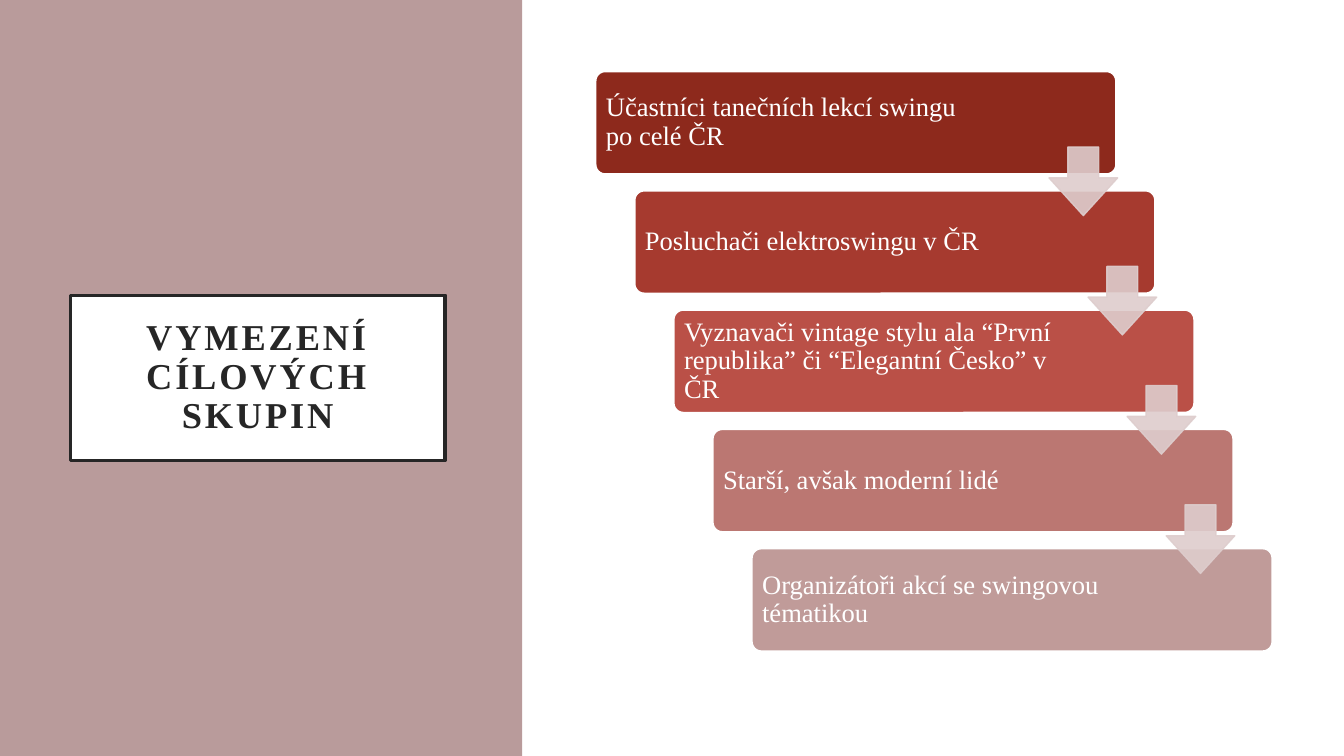
"""Build the slide on target groups with a stepped list of boxes."""
import pptx
import pptx.util
import pptx.dml.color
import pptx.enum.shapes
import pptx.enum.text
import pptx.oxml.ns
import lxml.etree

Pt = pptx.util.Pt
KIND = pptx.enum.shapes.MSO_SHAPE
ALIGN = pptx.enum.text.PP_ALIGN
ANCHOR = pptx.enum.text.MSO_ANCHOR
FIT = pptx.enum.text.MSO_AUTO_SIZE

SIZE = (960, 540)
FONT = "Times New Roman"
TITLE = "VYMEZENÍ CÍLOVÝCH SKUPIN"
GROUPS = [
    ("Účastníci tanečních lekcí swingu po celé ČR", "8D291C"),
    ("Posluchači elektroswingu v ČR", "A63A2F"),
    ("Vyznavači vintage stylu ala “První republika” či “Elegantní Česko” v ČR", "BA5047"),
    ("Starší, avšak moderní lidé", "BB7772"),
    ("Organizátoři akcí se swingovou tématikou", "C09B99"),
]
PANEL = (0, 0, 373, 540)
FRAME = (50.2, 210.9, 267.8, 118)
BOX = (424.8, 50.4, 373, 74.6)
ARROW = (749.3, 105, 49, 49)
STEP = (27.9, 85.2)
HEAD = {"size": 26, "bold": True, "hue": "262626", "align": ALIGN.CENTER,
        "inset": (14.4, 14.4, 14.4, 14.4)}
BODY = {"size": 19, "bold": False, "hue": "FFFFFF", "align": ALIGN.LEFT,
        "inset": (5.8, 5.8, 91, 5.8)}


def color(code):
    return pptx.dml.color.RGBColor.from_string(code)


def paint(shape, fill, line=None, width=0):
    shape.fill.solid()
    shape.fill.fore_color.rgb = color(fill)
    if line:
        shape.line.color.rgb = color(line)
        shape.line.width = Pt(width)
    else:
        shape.line.fill.background()


def shift(spot, n):
    x, y, w, h = spot
    return x + n * STEP[0], y + n * STEP[1], w, h


def add(slide, kind, spot, cuts=()):
    shape = slide.shapes.add_shape(kind, *map(Pt, spot))
    shape.shadow.inherit = False
    for i, cut in enumerate(cuts):
        shape.adjustments[i] = cut
    return shape


def write(shape, text, form):
    frame = shape.text_frame
    frame.text = text
    para = frame.paragraphs[0]
    sides = ("margin_left", "margin_top", "margin_right", "margin_bottom")
    looks = [
        (frame, {"word_wrap": True, "auto_size": FIT.NONE,
                 "vertical_anchor": ANCHOR.MIDDLE}),
        (frame, dict(zip(sides, map(Pt, form["inset"])))),
        (para, {"alignment": form["align"], "line_spacing": 0.9}),
        (para.runs[0].font, {"name": FONT, "size": Pt(form["size"]),
                             "bold": form["bold"]}),
    ]
    for item, look in looks:
        for key, value in look.items():
            setattr(item, key, value)
    para.runs[0].font.color.rgb = color(form["hue"])


def fade(shape, share):
    tag = pptx.oxml.ns.qn
    for node in shape.fill._xPr.iter(tag("a:srgbClr")):
        lxml.etree.SubElement(node, tag("a:alpha")).set("val", str(share * 1000))


def main():
    deck = pptx.Presentation()
    deck.slide_width, deck.slide_height = map(Pt, SIZE)
    slide = deck.slides.add_slide(deck.slide_layouts[5])

    panel = add(slide, KIND.RECTANGLE, PANEL)
    paint(panel, "B99B9B")
    slide.shapes._spTree.insert(2, panel._element)

    title = slide.shapes.title
    for key, value in zip(("left", "top", "width", "height"), FRAME):
        setattr(title, key, Pt(value))
    paint(title, "FFFFFF", "262626", 2.5)
    write(title, TITLE, HEAD)
    title.text_frame.paragraphs[0].runs[0].font._element.set("spc", "200")

    for n, (text, fill) in enumerate(GROUPS):
        box = add(slide, KIND.ROUNDED_RECTANGLE, shift(BOX, n), [0.1])
        paint(box, fill, "FFFFFF", 2.5)
        write(box, text, BODY)

    for n in range(len(GROUPS) - 1):
        arrow = add(slide, KIND.DOWN_ARROW, shift(ARROW, n), [0.45, 0.55])
        paint(arrow, "DECDCD", "DECDCD", 1)
        fade(arrow, 90)

    deck.save("out.pptx")


if __name__ == "__main__":
    main()
